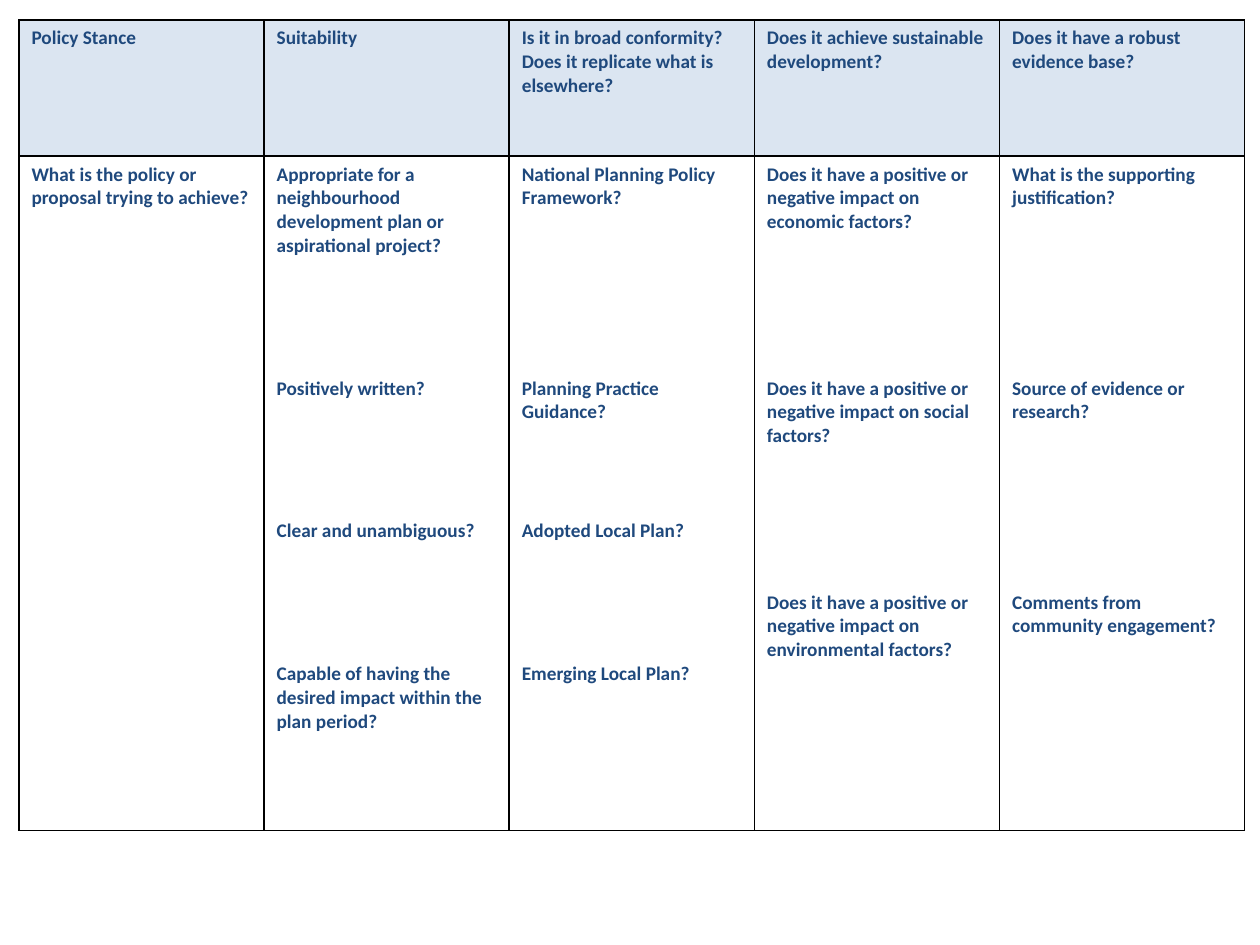
from typing import NamedTuple

from lxml.etree import SubElement
from pptx import Presentation
from pptx.dml.color import RGBColor
from pptx.oxml.ns import qn
from pptx.table import _Cell
from pptx.util import Inches, Pt

FONT_NAME = "Calibri"
TEXT_COLOUR = "1F497D"
HEADER_FILL = "DBE5F1"
BORDER_COLOUR = "000000"
LINE_PITCH = 13.6  # points


class Question(NamedTuple):
    text: str
    gap_lines: int = 0


class Criterion(NamedTuple):
    heading: list[Question]
    questions: list[Question]


IMPACT = "Does it have a positive or negative impact on {} factors?"

CRITERIA = [
    Criterion(
        [Question("Policy Stance")],
        [Question("What is the policy or proposal trying to achieve?")],
    ),
    Criterion(
        [Question("Suitability")],
        [
            Question("Appropriate for a neighbourhood development plan or aspirational project?"),
            Question("Positively written?", 5),
            Question("Clear and unambiguous?", 5),
            Question("Capable of having the desired impact within the plan period?", 5),
        ],
    ),
    Criterion(
        [
            Question("Is it in broad conformity?"),
            Question("Does it replicate what is elsewhere?"),
        ],
        [
            Question("National Planning Policy Framework?"),
            Question("Planning Practice Guidance?", 7),
            Question("Adopted Local Plan?", 4),
            Question("Emerging Local Plan?", 5),
        ],
    ),
    Criterion(
        [Question("Does it achieve sustainable development?")],
        [
            Question(IMPACT.format("economic")),
            Question(IMPACT.format("social"), 6),
            Question(IMPACT.format("environmental"), 6),
        ],
    ),
    Criterion(
        [Question("Does it have a robust evidence base?")],
        [
            Question("What is the supporting justification?"),
            Question("Source of evidence or research?", 7),
            Question("Comments from community engagement?", 7),
        ],
    ),
]


def colour(value: str) -> RGBColor:
    return RGBColor.from_string(value)


def add_borders(cell: _Cell) -> None:
    """Draw all four sides; the lines must come before the fill in the cell XML."""
    properties = cell._tc.get_or_add_tcPr()
    for index, side in enumerate(("a:lnL", "a:lnR", "a:lnT", "a:lnB")):
        line = SubElement(properties, qn(side), w=str(Pt(1)))
        fill = SubElement(line, qn("a:solidFill"))
        SubElement(fill, qn("a:srgbClr"), val=BORDER_COLOUR)
        properties.insert(index, line)


def write_questions(cell: _Cell, questions: list[Question]) -> None:
    frame = cell.text_frame
    for index, question in enumerate(questions):
        paragraph = frame.add_paragraph() if index else frame.paragraphs[0]
        paragraph.text = question.text
        if question.gap_lines:
            paragraph.space_before = Pt(question.gap_lines * LINE_PITCH)
        font = paragraph.font
        font.name = FONT_NAME
        font.size = Pt(11)
        font.bold = True
        font.color.rgb = colour(TEXT_COLOUR)


def main() -> None:
    deck = Presentation()
    deck.slide_width, deck.slide_height = Inches(10), Inches(7.5)
    page = deck.slides.add_slide(deck.slide_layouts[6])

    table = page.shapes.add_table(
        2, len(CRITERIA), Inches(0.15), Inches(0.16), Inches(9.73), Inches(6.43)
    ).table
    table.first_row = table.horz_banding = False
    table.rows[0].height = Inches(1.08)
    table.rows[1].height = Inches(5.35)

    for column, criterion in enumerate(CRITERIA):
        for row, questions in enumerate(criterion):
            cell = table.cell(row, column)
            write_questions(cell, questions)
            if row == 0:
                cell.fill.solid()
                cell.fill.fore_color.rgb = colour(HEADER_FILL)
            else:
                cell.fill.background()
            add_borders(cell)

    deck.save("out.pptx")


if __name__ == "__main__":
    main()
